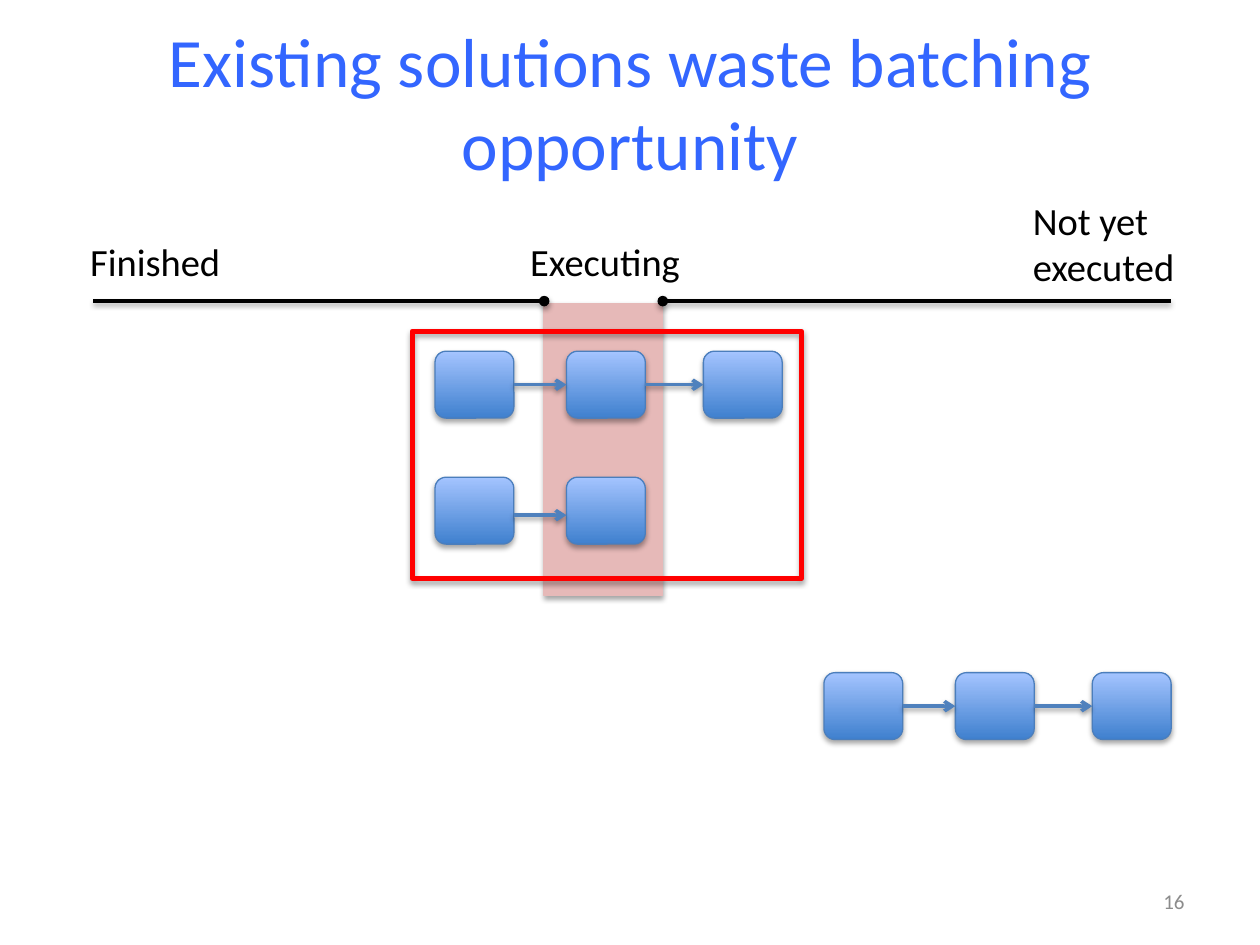
"""Build a slide on batching: a timeline, a band for running work and three task chains."""
from lxml.etree import SubElement as Sub
from pptx import Presentation
from pptx.dml.color import RGBColor as RGB
from pptx.enum.shapes import MSO_CONNECTOR as Conn, MSO_SHAPE as Kind
from pptx.enum.text import MSO_ANCHOR as Anchor, MSO_AUTO_SIZE as Auto, PP_ALIGN as Align
from pptx.oxml.ns import qn
from pptx.util import Cm, Pt

TITLE = "Existing solutions waste batching opportunity"
LABELS = [
    ("Executing", 10.44, 4.67, 3.56, 1.19),
    ("Finished", 1.57, 4.67, 3.15, 1.19),
    ("Not yet\nexecuted", 20.57, 3.84, 3.4, 2.13),
]
AXIS_Y = 6.07
AXES = [(13.36, 23.6, "headEnd"), (1.88, 10.97, "tailEnd")]
BAND = (10.97, 6.12, 2.39, 5.89)
FRAME = (8.31, 6.68, 7.85, 4.98)
CHAINS = [(8.77, 7.08, 3, 0), (8.77, 9.62, 2, 0.09), (16.61, 13.56, 3, 0)]
STEPS = (0, 2.65, 5.41)
BOX_W, BOX_H = 1.59, 1.35
STOPS = ("3F80CE", "A4C4FF")
BLACK = "000000"


def paint(hue):
    return RGB.from_string(hue)


def shade(item, dist=1.8, alpha=35):
    glow = Sub(item._element.spPr, qn("a:effectLst"))
    drop = Sub(glow, qn("a:outerShdw"), blurRad=str(Pt(3.1)), dist=str(Pt(dist)),
               dir="5400000", rotWithShape="0")
    tone = Sub(drop, qn("a:srgbClr"), val=BLACK)
    Sub(tone, qn("a:alpha"), val=str(alpha * 1000))


def stroke(item, hue, width):
    item.line.color.rgb = paint(hue)
    item.line.width = Pt(width)


def add_block(home, kind, area, hue, width, fill=None):
    block = home.add_shape(kind, *map(Cm, area))
    if fill is None:
        block.fill.background()
    elif isinstance(fill, str):
        block.fill.solid()
        block.fill.fore_color.rgb = paint(fill)
    else:
        block.fill.gradient()
        block.fill.gradient_angle = 90
        for stop, tint in zip(block.fill.gradient_stops, fill):
            stop.color.rgb = paint(tint)
    stroke(block, hue, width)
    shade(block)
    return block


def add_line(home, left, right, y, hue, end, mark):
    line = home.add_connector(Conn.STRAIGHT, Cm(left), Cm(y), Cm(right), Cm(y))
    stroke(line, hue, 2)
    Sub(line.line._get_or_add_ln(), qn("a:" + end), type=mark)
    shade(line, 1.6, 38)
    return line


def add_text(home, words, area, size, hue, align=Align.LEFT, **form):
    frame = home.add_textbox(*map(Cm, area)).text_frame
    frame.text = words
    for name, value in form.items():
        setattr(frame, name, value)
    for para in frame.paragraphs:
        para.alignment = align
        font = para.runs[0].font
        for name, value in {"name": "Calibri", "size": Pt(size)}.items():
            setattr(font, name, value)
        font.color.rgb = paint(hue)


def add_chain(home, left, top, count, drop):
    group = home.add_group_shape().shapes
    spots = [left + step for step in STEPS[:count]]
    boxes = [add_block(group, Kind.ROUNDED_RECTANGLE, (x, top, BOX_W, BOX_H),
                       "4B7EBC", 0.75, STOPS) for x in spots]
    y = top + BOX_H / 2 + drop
    for i in range(count - 1):
        line = add_line(group, spots[i] + BOX_W, spots[i + 1], y, "4F81BD", "tailEnd", "arrow")
        if not drop:
            line.begin_connect(boxes[i], 3)
            line.end_connect(boxes[i + 1], 1)


def main():
    deck = Presentation()
    deck.slide_width, deck.slide_height = Cm(25.4), Cm(19.05)
    home = deck.slides.add_slide(deck.slide_layouts[6]).shapes
    mid = {"word_wrap": True, "vertical_anchor": Anchor.MIDDLE}

    add_block(home, Kind.RECTANGLE, BAND, "E6B9B8", 0.75, "E6B9B8")
    for left, right, end in AXES:
        add_line(home, left, right, AXIS_Y, BLACK, end, "oval")
    for words, *area in LABELS:
        add_text(home, words, area, 22, BLACK, word_wrap=False, auto_size=Auto.SHAPE_TO_FIT_TEXT)
    add_text(home, TITLE, (1.27, 0.46, 22.86, 3.18), 39.6, "3366FF", Align.CENTER, **mid)
    add_text(home, "16", (18.21, 17.65, 5.92, 1.02), 12, "8C8C8C", Align.RIGHT, **mid)
    for chain in CHAINS[:2]:
        add_chain(home, *chain)
    add_block(home, Kind.RECTANGLE, FRAME, "FF0000", 3)
    add_chain(home, *CHAINS[2])
    deck.save("out.pptx")


if __name__ == "__main__":
    main()
